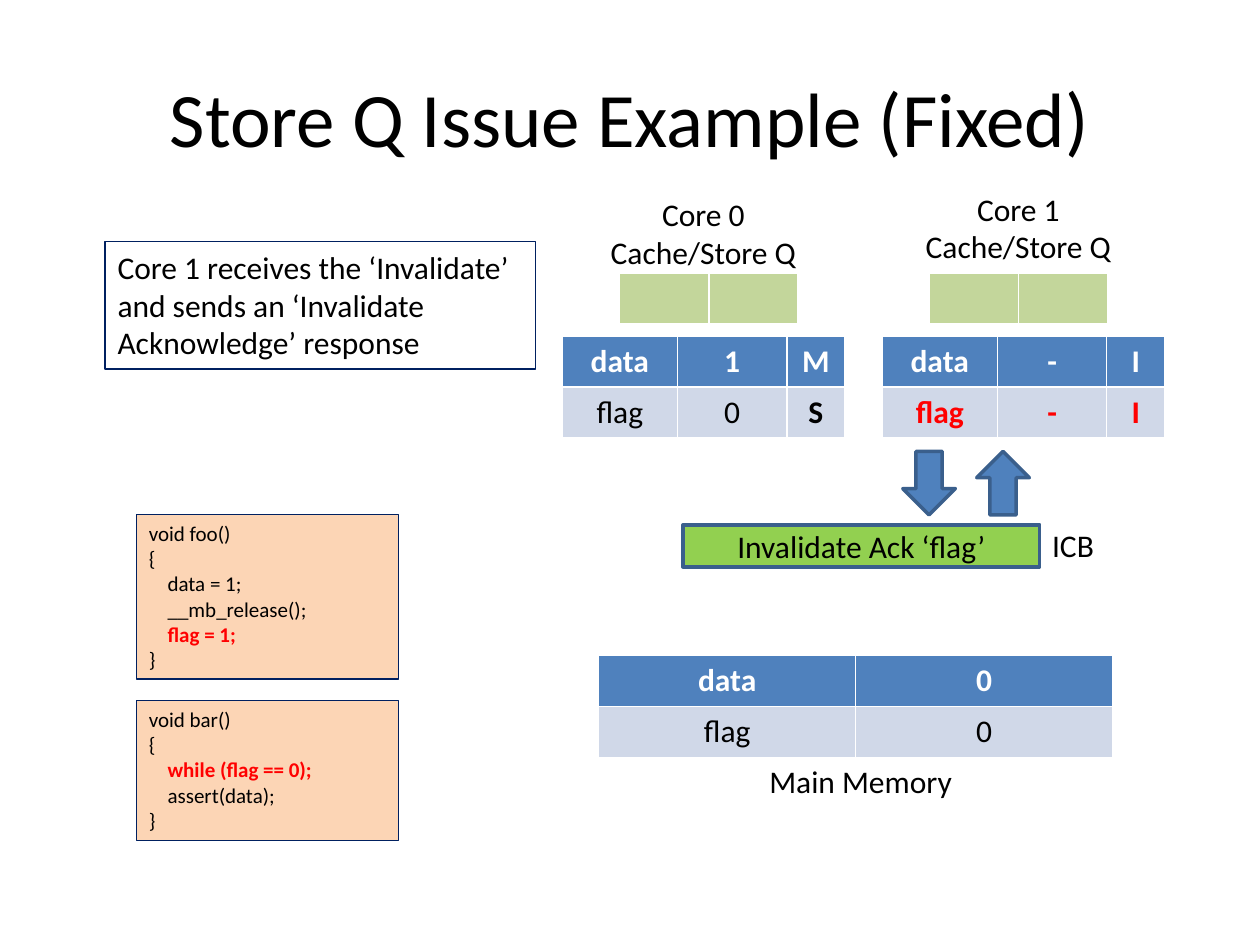
import pptx
import pptx.util
import pptx.dml.color
import pptx.enum.shapes
import pptx.enum.text

Cm = pptx.util.Cm
Pt = pptx.util.Pt
RGB = pptx.dml.color.RGBColor
KIND = pptx.enum.shapes.MSO_SHAPE
ALIGN = pptx.enum.text.PP_ALIGN
ANCHOR = pptx.enum.text.MSO_ANCHOR
FIT = pptx.enum.text.MSO_AUTO_SIZE

BLACK = RGB(0x00, 0x00, 0x00)
WHITE = RGB(0xFF, 0xFF, 0xFF)
RED = RGB(0xFF, 0x00, 0x00)
BLUE = RGB(0x4F, 0x81, 0xBD)
EDGE = RGB(0x3A, 0x5F, 0x8C)
NAVY = RGB(0x00, 0x20, 0x60)
PALE = RGB(0xD0, 0xD8, 0xE8)
LIME = RGB(0x92, 0xD0, 0x50)
SAGE = RGB(0xC3, 0xD6, 0x9B)
PEACH = RGB(0xFC, 0xD5, 0xB5)

BASE = {"name": "Calibri", "size": Pt(18), "bold": False}


def apply(item, form):
    for key, value in form.items():
        setattr(item, key, value)


def place(item, box):
    names = ("left", "top", "width", "height")
    apply(item, dict(zip(names, map(Cm, box))))


def write(para, text, color=BLACK, align=ALIGN.LEFT, **form):
    para.alignment = align
    run = para.add_run()
    run.text = text
    apply(run.font, {**BASE, **form})
    run.font.color.rgb = color


def add_title(slide, text):
    title = slide.shapes.title
    place(title, (1.27, 0.76, 22.86, 3.17))
    title.text_frame.vertical_anchor = ANCHOR.MIDDLE
    write(title.text_frame.paragraphs[0], text, align=ALIGN.CENTER, size=Pt(44))


def add_label(slide, box, text, align=ALIGN.CENTER, wrap=True):
    frame = slide.shapes.add_textbox(*map(Cm, box)).text_frame
    apply(frame, {"word_wrap": wrap, "auto_size": FIT.SHAPE_TO_FIT_TEXT})
    write(frame.paragraphs[0], text, align=align)


def add_box(slide, box, fill=None, line=NAVY, width=0.75, kind=KIND.RECTANGLE):
    shape = slide.shapes.add_shape(kind, *map(Cm, box))
    shape.shadow.inherit = False
    if fill is None:
        shape.fill.background()
    else:
        shape.fill.solid()
        shape.fill.fore_color.rgb = fill
    shape.line.color.rgb = line
    shape.line.width = Pt(width)
    shape.text_frame.vertical_anchor = ANCHOR.TOP
    return shape


def add_code(slide, box, lines, hot):
    frame = add_box(slide, box, PEACH).text_frame
    for num, text in enumerate(lines):
        para = frame.add_paragraph() if num else frame.paragraphs[0]
        red = text == hot
        write(para, text, RED if red else BLACK, size=Pt(12), bold=red)
        if text.endswith(";"):
            para._p.get_or_add_pPr().set("marL", str(Cm(0.38)))


def add_grid(slide, left, top, cols, high, fills, rows=(), color=BLACK, bold=()):
    count = len(fills)
    frame = slide.shapes.add_table(
        count, len(cols), Cm(left), Cm(top), Cm(sum(cols)), Cm(high * count))
    table = frame.table
    for col, wide in zip(table.columns, cols):
        col.width = Cm(wide)
    for row, fill in zip(table.rows, fills):
        row.height = Cm(high)
        for cell in row.cells:
            cell.fill.solid()
            cell.fill.fore_color.rgb = fill
    for y, words in enumerate(rows):
        for x, word in enumerate(words):
            write(table.cell(y, x).text_frame.paragraphs[0], word,
                  color if y else WHITE, ALIGN.CENTER, bold=y == 0 or x in bold)


def main():
    deck = pptx.Presentation()
    apply(deck, {"slide_width": Cm(25.4), "slide_height": Cm(19.05)})
    slide = deck.slides.add_slide(deck.slide_layouts[5])
    add_title(slide, "Store Q Issue Example (Fixed)")

    bar = add_box(slide, (13.77, 10.58, 7.19, 0.85), LIME, EDGE, 2).text_frame
    bar.vertical_anchor = ANCHOR.MIDDLE
    write(bar.paragraphs[0], "Invalidate Ack ‘flag’", align=ALIGN.CENTER)
    add_label(slide, (20.96, 10.48, 1.36, 1.02), "ICB", ALIGN.LEFT, False)

    note = add_box(slide, (2.12, 4.87, 8.68, 2.57)).text_frame
    write(note.paragraphs[0], "Core 1 receives the ‘Invalidate’ and sends an "
          "‘Invalidate Acknowledge’ response")

    cache = (2.33, 2.2, 1.17)
    tones = (BLUE, PALE)
    add_grid(slide, 11.33, 6.77, cache, 1.03, tones,
             (("data", "1", "M"), ("flag", "0", "S")), bold=(2,))
    add_grid(slide, 17.78, 6.77, cache, 1.03, tones,
             (("data", "-", "I"), ("flag", "-", "I")), RED, (0, 1, 2))
    add_grid(slide, 12.07, 13.21, (5.18, 5.18), 1.03, tones,
             (("data", "0"), ("flag", "0")))
    add_label(slide, (14.28, 15.24, 6.14, 1.02), "Main Memory")

    for core, left, top, queue in ((0, 11.85, 3.81, 12.49), (1, 18.2, 3.7, 18.73)):
        add_label(slide, (left, top, 4.66, 1.79), f"Core {core} Cache/Store Q")
        add_grid(slide, queue, 5.5, (1.8, 1.8), 1.02, (SAGE,))

    add_code(slide, (2.75, 10.37, 5.29, 3.32),
             ("void foo()", "{", "data = 1;", "__mb_release();", "flag = 1;", "}"),
             "flag = 1;")
    add_code(slide, (2.75, 14.12, 5.29, 2.82),
             ("void bar()", "{", "while (flag == 0);", "assert(data);", "}"),
             "while (flag == 0);")

    for left, turn in ((18.2, 0), (19.69, 180)):
        arrow = add_box(slide, (left, 9.1, 1.06, 1.28), BLUE, EDGE, 2, KIND.DOWN_ARROW)
        arrow.rotation = turn

    deck.save("out.pptx")


if __name__ == "__main__":
    main()
